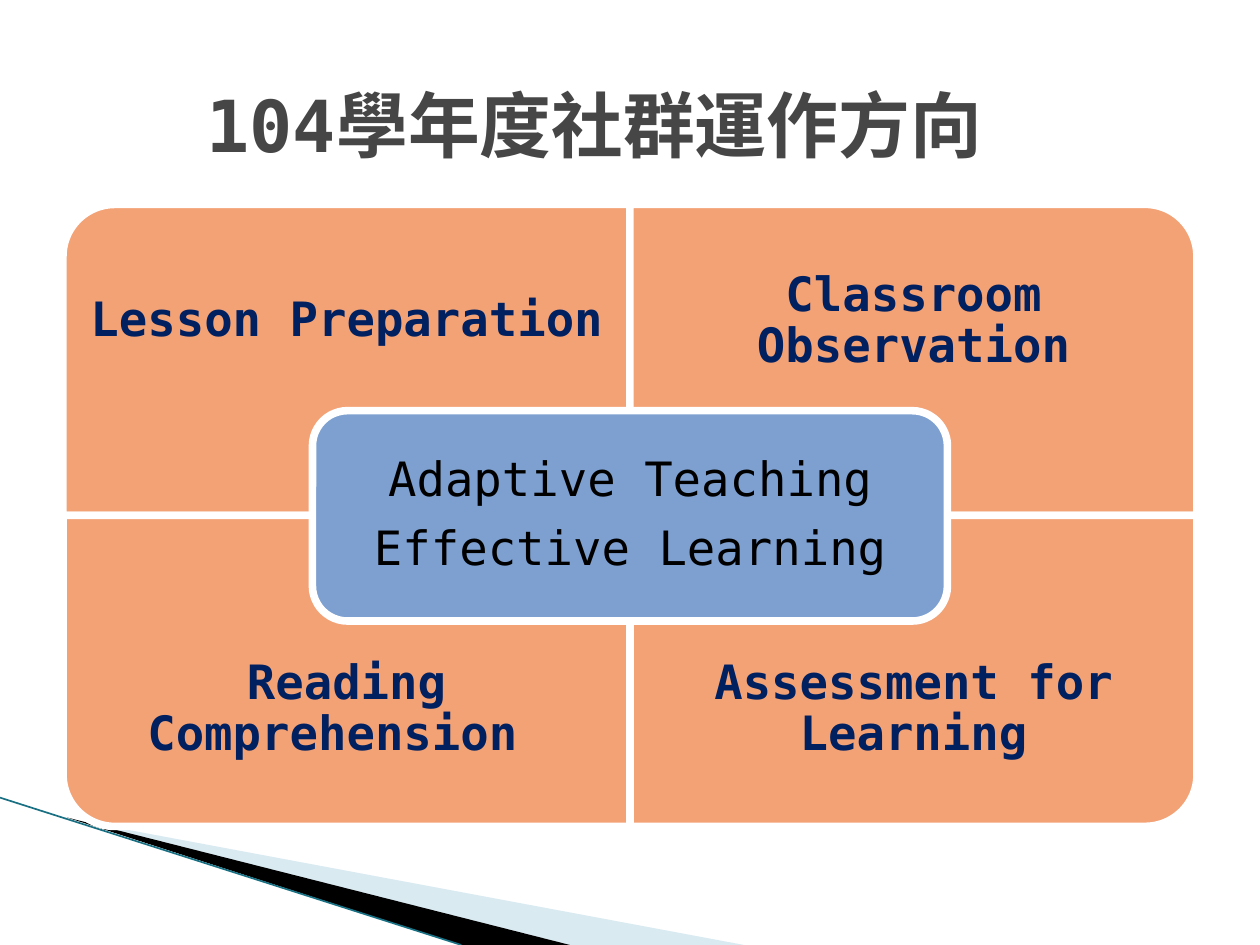
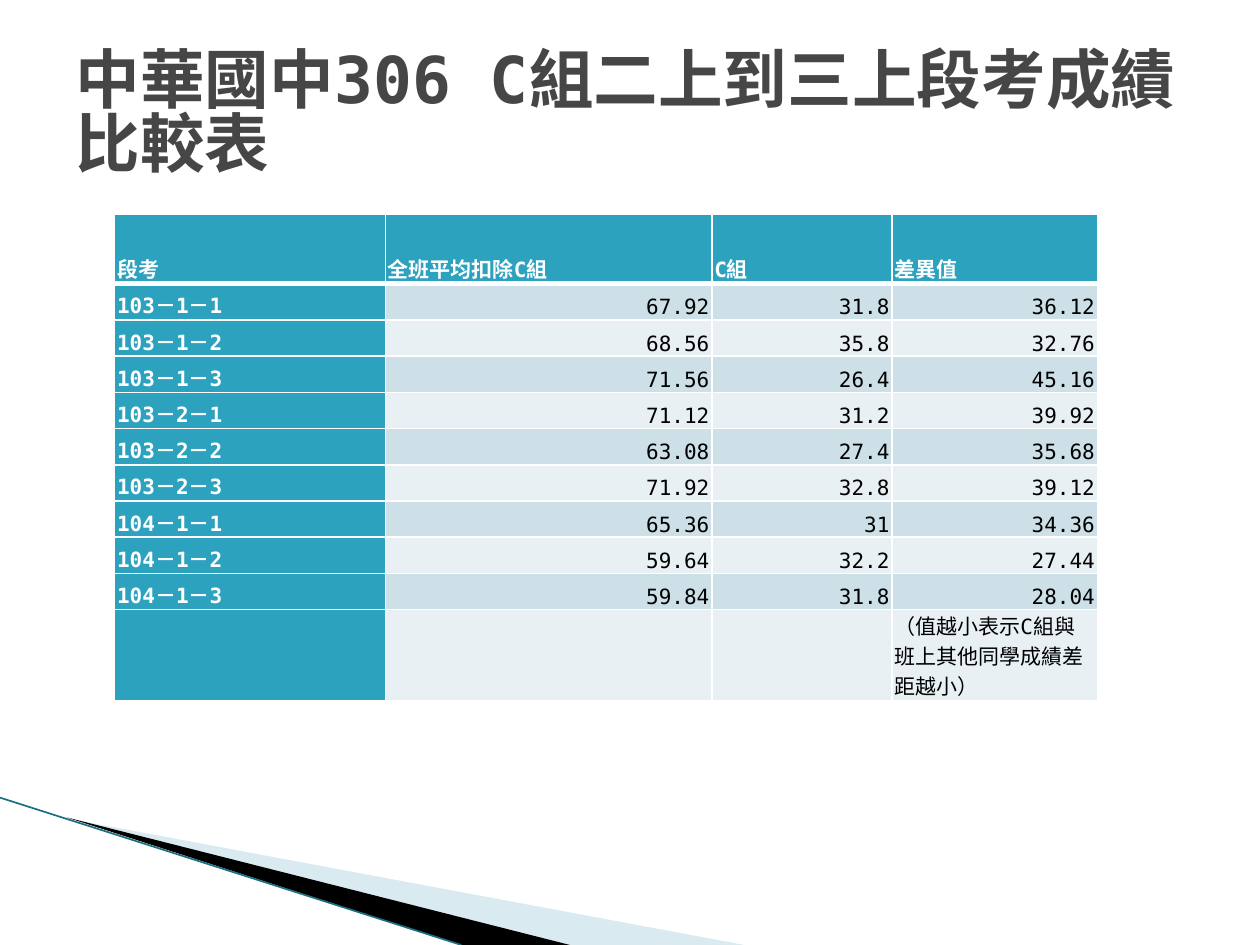
from dataclasses import dataclass

import pptx
import pptx.dml.color
import pptx.enum.shapes
import pptx.enum.text
import pptx.oxml
import pptx.oxml.ns
import pptx.util

Cm = pptx.util.Cm
Pt = pptx.util.Pt
Shapes = pptx.enum.shapes.MSO_SHAPE
Anchor = pptx.enum.text.MSO_ANCHOR
Align = pptx.enum.text.PP_ALIGN
qn = pptx.oxml.ns.qn


# Theme
@dataclass(frozen=True)
class Theme:
    font: str = "DejaVu Sans Mono"
    white: str = "FFFFFF"
    black: str = "000000"
    title: str = "464646"
    navy: str = "002060"
    orange: str = "F3A276"
    blue: str = "7DA0D0"
    teal: str = "2DA2BF"
    band_dark: str = "CDE0E8"
    band_light: str = "E8F0F4"
    ribbon: str = "A0CBDC"
    ribbon_line: str = "1A7083"
    diagram_size: float = 27
    table_size: float = 12
    outline: float = 4.33


THEME = Theme()


# Repeated elements; lengths in centimetres
@dataclass(frozen=True)
class Box:
    left: float
    top: float
    width: float
    height: float

    def lengths(self) -> tuple:
        return Cm(self.left), Cm(self.top), Cm(self.width), Cm(self.height)


@dataclass(frozen=True)
class Ribbon:
    points: tuple
    color: str
    opacity: int = 100


@dataclass(frozen=True)
class Quadrant:
    label: str
    column: int
    row: int
    rotation: int


RIBBONS = (
    Ribbon(((1.4, 16.51), (15, 19.05), (11.49, 19.05)), THEME.ribbon, 40),
    Ribbon(((1.35, 16.48), (11.49, 19.05), (9.3, 19.05)), THEME.black),
)
QUADRANTS = (
    Quadrant("Lesson Preparation", 0, 0, 270),
    Quadrant("Classroom Observation", 1, 0, 0),
    Quadrant("Reading Comprehension ", 0, 1, 180),
    Quadrant("Assessment for Learning", 1, 1, 90),
)
GRID = Box(1.27, 4.12, 22.86, 12.54)
LABEL_HEIGHT = 4.72

TABLE_BOX = Box(2.31, 4.32, 19.81, 9.6)
COLUMN_WIDTHS = (5.46, 6.58, 3.63, 4.14)
HEADER_HEIGHT, ROW_HEIGHT, NOTE_HEIGHT = 1.4, 0.73, 1.65
SCORES = (
    ("段考", "全班平均扣除C組", "C組", "差異值"),
    ("103－1－1", "67.92", "31.8", "36.12"),
    ("103－1－2", "68.56", "35.8", "32.76"),
    ("103－1－3", "71.56", "26.4", "45.16"),
    ("103－2－1", "71.12", "31.2", "39.92"),
    ("103－2－2", "63.08", "27.4", "35.68"),
    ("103－2－3", "71.92", "32.8", "39.12"),
    ("104－1－1", "65.36", "31", "34.36"),
    ("104－1－2", "59.64", "32.2", "27.44"),
    ("104－1－3", "59.84", "31.8", "28.04"),
    ("", "", "", "（值越小表示C組與班上其他同學成績差距越小）"),
)


# Formatting helpers
def rgb(color: str) -> pptx.dml.color.RGBColor:
    return pptx.dml.color.RGBColor.from_string(color)


def format_font(paragraph, size: float, color: str, bold: bool) -> None:
    font = paragraph.font
    font.name, font.size, font.bold = THEME.font, Pt(size), bold
    font.color.rgb = rgb(color)


def paint(shape, fill: str, outline: float = 0) -> None:
    shape.shadow.inherit = False
    shape.fill.solid()
    shape.fill.fore_color.rgb = rgb(fill)
    if outline:
        shape.line.color.rgb = rgb(THEME.white)
        shape.line.width = Pt(outline)
    else:
        shape.line.fill.background()


def write_lines(shape, lines: tuple, color: str, bold: bool, inset: float) -> None:
    frame = shape.text_frame
    frame.word_wrap = True
    frame.vertical_anchor = Anchor.MIDDLE
    frame.margin_left = frame.margin_right = Cm(inset)
    frame.margin_top = frame.margin_bottom = Cm(inset)
    frame.text = "\n".join(lines)
    for paragraph in frame.paragraphs:
        paragraph.alignment = Align.CENTER
        paragraph.line_spacing = 0.9
        paragraph.space_after = Pt(10)
        format_font(paragraph, THEME.diagram_size, color, bold)


# Shared parts
def add_ribbons(slide, layout) -> None:
    """Draw the corner ribbons and hand them to the layout."""
    parts = []
    for ribbon in RIBBONS:
        start, *others = [(Cm(x), Cm(y)) for x, y in ribbon.points]
        builder = slide.shapes.build_freeform(*start)
        builder.add_line_segments(others, close=True)
        shape = builder.convert_to_shape()
        paint(shape, ribbon.color)
        if ribbon.opacity < 100:
            color = next(shape.element.iter(qn("a:srgbClr")))
            alpha = pptx.oxml.parse_xml(
                f'<a:alpha {pptx.oxml.ns.nsdecls("a")} val="{ribbon.opacity * 1000}"/>')
            color.append(alpha)
        parts.append(shape)
    edge = slide.shapes.add_connector(
        pptx.enum.shapes.MSO_CONNECTOR.STRAIGHT, 0, Cm(16.08), Cm(9.3), Cm(19.05))
    edge.line.color.rgb = rgb(THEME.ribbon_line)
    edge.line.width = Pt(0.95)
    edge.element.spPr.append(
        pptx.oxml.parse_xml(f'<a:effectLst {pptx.oxml.ns.nsdecls("a")}/>'))
    for part in (*parts, edge):
        layout.shapes.element.append(part.element)


def set_title(slide, text: str, box: Box, size: float, spacing: float) -> None:
    title = slide.shapes.title
    title.left, title.top, title.width, title.height = box.lengths()
    frame = title.text_frame
    frame.text = text
    frame.word_wrap = True
    frame.auto_size = pptx.enum.text.MSO_AUTO_SIZE.NONE
    frame.vertical_anchor = Anchor.MIDDLE
    paragraph = frame.paragraphs[0]
    paragraph.alignment = Align.LEFT
    paragraph.line_spacing = spacing
    format_font(paragraph, size, THEME.title, True)


# Directions diagram
def add_quadrant(slide, quadrant: Quadrant) -> None:
    width, height = GRID.width / 2, GRID.height / 2
    left = GRID.left + quadrant.column * width
    top = GRID.top + quadrant.row * height
    box = Box(left, top, width, height)
    if quadrant.rotation % 180:
        shift = (width - height) / 2
        box = Box(left + shift, top - shift, height, width)
    shape = slide.shapes.add_shape(Shapes.ROUND_1_RECTANGLE, *box.lengths())
    shape.rotation = quadrant.rotation
    paint(shape, THEME.orange, THEME.outline)

    label_top = top + quadrant.row * (height - LABEL_HEIGHT)
    label = slide.shapes.add_textbox(*Box(left, label_top, width, LABEL_HEIGHT).lengths())
    write_lines(label, (quadrant.label,), THEME.navy, True, 0.53)


def build_directions(slide) -> None:
    set_title(slide, "104學年度社群運作方向", Box(3.91, 0.91, 22.86, 3.18), 41, 1)
    for quadrant in QUADRANTS:
        add_quadrant(slide, quadrant)
    goal = slide.shapes.add_shape(
        Shapes.ROUNDED_RECTANGLE, *Box(6.3, 8.28, 12.8, 4.24).lengths())
    paint(goal, THEME.blue, THEME.outline)
    write_lines(goal, ("Adaptive Teaching", "Effective Learning"), THEME.black, False, 0.28)


# Score table
def set_borders(cell, top: float, bottom: float) -> None:
    properties = cell._tc.get_or_add_tcPr()
    for side, width in (("L", 1), ("R", 1), ("T", top), ("B", bottom)):
        properties.append(pptx.oxml.parse_xml(
            f'<a:ln{side} {pptx.oxml.ns.nsdecls("a")} w="{Pt(width)}"><a:solidFill>'
            f'<a:srgbClr val="{THEME.white}"/></a:solidFill></a:ln{side}>'))


def fill_cell(cell, text: str, row: int, column: int) -> None:
    heading = row == 0 or column == 0
    band = THEME.band_dark if row % 2 else THEME.band_light
    set_borders(cell, 3 if row == 1 else 1, 3 if row == 0 else 1)
    cell.fill.solid()
    cell.fill.fore_color.rgb = rgb(THEME.teal if heading else band)
    cell.vertical_anchor = Anchor.BOTTOM
    cell.margin_left = cell.margin_right = Cm(0.05)
    cell.margin_top = cell.margin_bottom = 0
    cell.text = text
    paragraph = cell.text_frame.paragraphs[0]
    is_number = not heading and row < len(SCORES) - 1
    paragraph.alignment = Align.RIGHT if is_number else Align.LEFT
    format_font(paragraph, THEME.table_size,
                THEME.white if heading else THEME.black, heading)


def build_scores(slide) -> None:
    set_title(slide, "中華國中306 C組二上到三上段考成績比較表",
              Box(1.27, 0.76, 22.86, 3.18), 36.9, 0.82)
    table = slide.shapes.add_table(
        len(SCORES), len(COLUMN_WIDTHS), *TABLE_BOX.lengths()).table
    table.first_row = table.horz_banding = False
    for column, width in zip(table.columns, COLUMN_WIDTHS):
        column.width = Cm(width)
    heights = (HEADER_HEIGHT, *[ROW_HEIGHT] * (len(SCORES) - 2), NOTE_HEIGHT)
    for row, height in zip(table.rows, heights):
        row.height = Cm(height)
    for row, texts in enumerate(SCORES):
        for column, text in enumerate(texts):
            fill_cell(table.cell(row, column), text, row, column)


def main() -> None:
    presentation = pptx.Presentation()
    presentation.slide_width, presentation.slide_height = Cm(25.4), Cm(19.05)
    layout = presentation.slide_layouts.get_by_name("Title Only")
    directions, scores = [presentation.slides.add_slide(layout) for _ in range(2)]
    add_ribbons(directions, layout)
    build_directions(directions)
    build_scores(scores)
    presentation.save("out.pptx")


if __name__ == "__main__":
    main()
